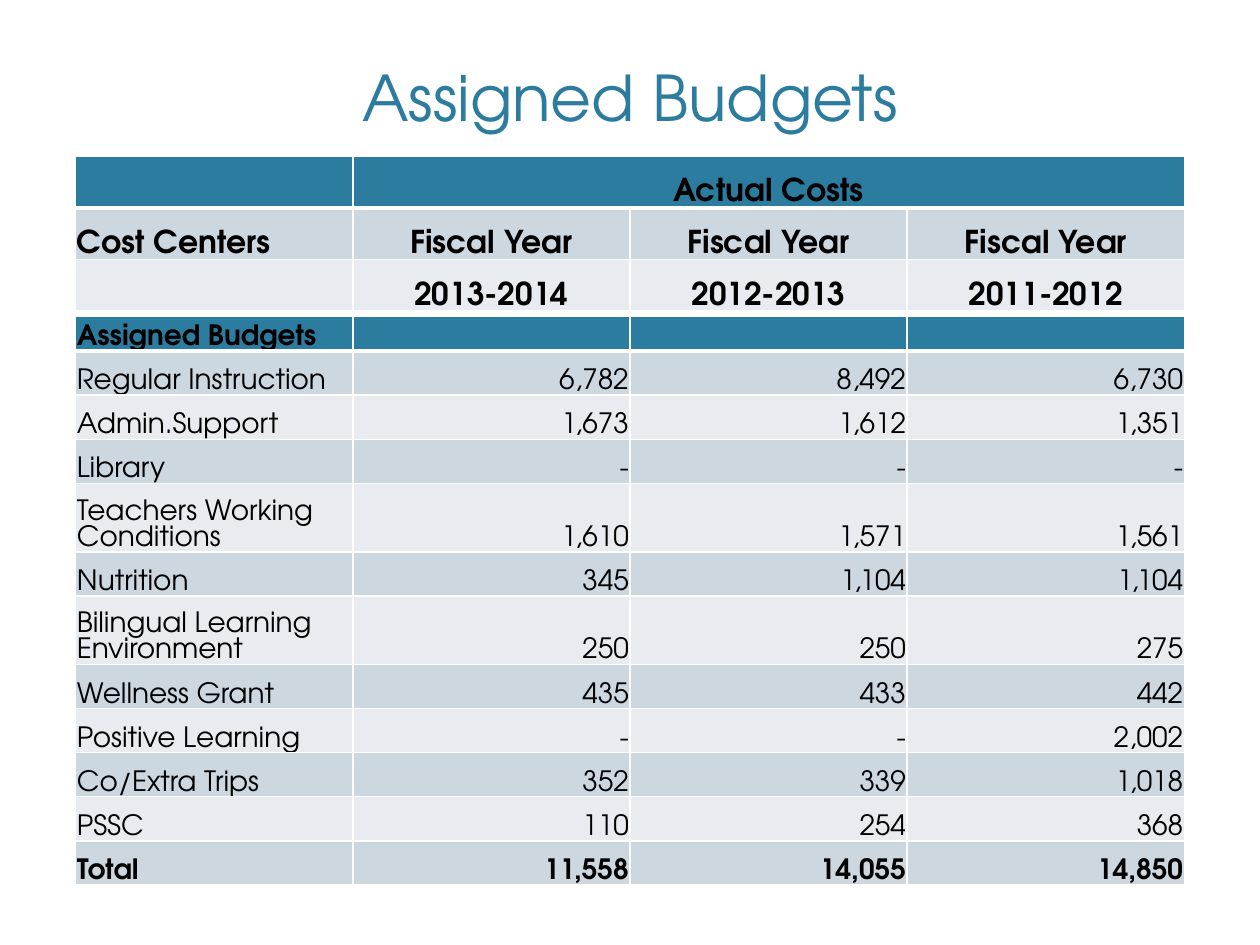
from lxml import etree
from pptx import Presentation
from pptx.dml.color import RGBColor
from pptx.enum.text import MSO_ANCHOR, PP_ALIGN
from pptx.oxml.ns import qn
from pptx.util import Inches, Pt

LEFT, MID, RIGHT = PP_ALIGN.LEFT, PP_ALIGN.CENTER, PP_ALIGN.RIGHT
BOTTOM = MSO_ANCHOR.BOTTOM
FONT = "TeX Gyre Adventor"
COLORS = {"head": "2C7C9F", "dark": "CDD7DF", "light": "E8ECF0",
          "line": "FFFFFF", "text": "000000"}
EDGE = 0.6
WIDTH = 8.8

YEARS = [
    ["", "Actual Costs", "", ""],
    ["Cost Centers", "Fiscal Year", "Fiscal Year", "Fiscal Year"],
    ["", "2013-2014", "2012-2013", "2011-2012"],
]
COSTS = [
    ["Assigned Budgets", "", "", ""],
    ["Regular Instruction", "6,782", "8,492", "6,730"],
    ["Admin.Support", "1,673", "1,612", "1,351"],
    ["Library", "-", "-", "-"],
    ["Teachers Working Conditions", "1,610", "1,571", "1,561"],
    ["Nutrition", "345", "1,104", "1,104"],
    ["Bilingual Learning Environment", "250", "250", "275"],
    ["Wellness Grant", "435", "433", "442"],
    ["Positive Learning", "-", "-", "2,002"],
    ["Co/Extra Trips", "352", "339", "1,018"],
    ["PSSC", "110", "254", "368"],
    ["Total", "11,558", "14,055", "14,850"],
]


def color(name):
    return RGBColor.from_string(COLORS[name])


def write(frame, text, size, tint, align, bold=False):
    para = frame.paragraphs[0]
    para.text = text
    para.alignment = align
    for run in para.runs:
        font = run.font
        font.name, font.size, font.bold = FONT, Pt(size), bold
        font.color.rgb = color(tint)
    if not text:
        etree.SubElement(para._p, qn("a:endParaRPr"), sz=str(size * 100))


def add_title(slide, text):
    box = slide.shapes.add_textbox(Inches(EDGE), Inches(0.43),
                                   Inches(WIDTH), Inches(0.68))
    frame = box.text_frame
    frame.word_wrap = True
    frame.vertical_anchor = BOTTOM
    write(frame, text, 36, "head", MID)


def add_edges(cell, row):
    props = cell._tc.get_or_add_tcPr()
    widths = {"L": 1, "R": 1, "T": 3 if row == 1 else 1,
              "B": 3 if row == 0 else 1}
    for spot, (side, width) in enumerate(widths.items()):
        line = etree.Element(qn("a:ln" + side), w=str(Pt(width)))
        fill = etree.SubElement(line, qn("a:solidFill"))
        etree.SubElement(fill, qn("a:srgbClr"), val=COLORS["line"])
        props.insert(spot, line)


def style_cell(cell, row):
    cell.margin_left = cell.margin_right = cell.margin_top = Inches(0.01)
    cell.margin_bottom = 0
    cell.vertical_anchor = BOTTOM
    cell.fill.solid()
    band = "head" if row == 0 else "dark" if row % 2 else "light"
    cell.fill.fore_color.rgb = color(band)
    add_edges(cell, row)


def add_grid(slide, data, top, heights, size, align, strong):
    count = len(data[0])
    frame = slide.shapes.add_table(len(data), count, Inches(EDGE), Inches(top),
                                   Inches(WIDTH), Inches(sum(heights)))
    table = frame.table
    for col in table.columns:
        col.width = Inches(WIDTH / count)
    for row, texts in enumerate(data):
        table.rows[row].height = Inches(heights[row])
        for col, text in enumerate(texts):
            cell = table.cell(row, col)
            style_cell(cell, row)
            write(cell.text_frame, text, size, "text",
                  align if col else LEFT, row in strong)
    return table


def main():
    deck = Presentation()
    deck.slide_width, deck.slide_height = Inches(10), Inches(7.5)
    slide = deck.slides.add_slide(deck.slide_layouts[6])
    add_title(slide, "Assigned Budgets")
    years = add_grid(slide, YEARS, 1.24, [0.41] * 3, 18, MID, {0, 1, 2})
    years.cell(0, 1).merge(years.cell(0, 3))
    tall = {4, 6}
    heights = [0.26] + [0.51 if row in tall else 0.35
                        for row in range(1, len(COSTS))]
    add_grid(slide, COSTS, 2.51, heights, 16, RIGHT, {0, len(COSTS) - 1})
    deck.save("out.pptx")


if __name__ == "__main__":
    main()
